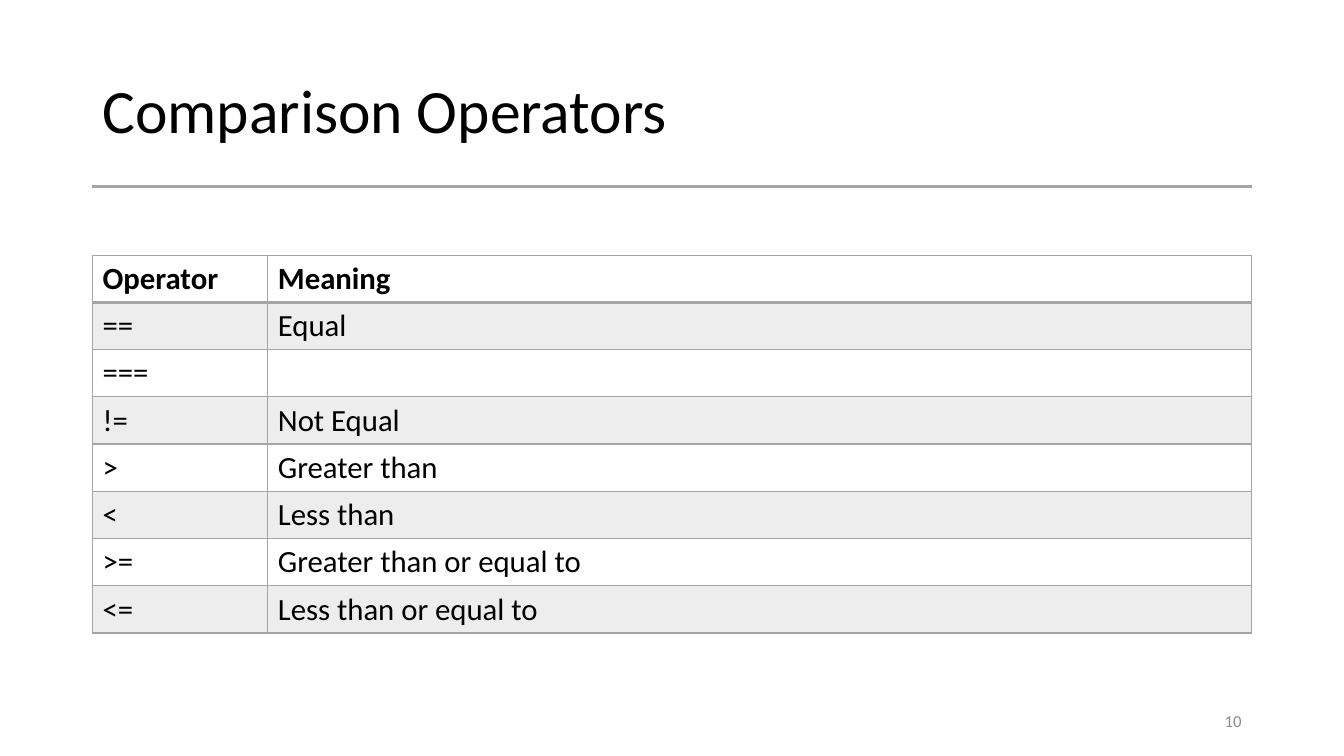
from dataclasses import dataclass

from lxml import etree
from pptx import Presentation
from pptx import util as u
from pptx.dml.color import RGBColor
from pptx.enum import shapes, text
from pptx.oxml import ns


@dataclass(frozen=True)
class Theme:
    font: str = "Calibri"
    ink: str = "000000"
    paper: str = "FFFFFF"
    rule: str = "A5A5A5"
    band: str = "EDEDED"
    muted: str = "8C8C8C"
    title: int = 44
    body: int = 22
    small: int = 12


THEME = Theme()
LEFT, WIDTH = u.Cm(2.33), u.Cm(29.21)
COLUMNS = (u.Cm(4.42), u.Cm(24.79))
ROW_HEIGHT = u.Cm(1.19)
OPERATORS = (
    ("Operator", "Meaning"),
    ("==", "Equal"),
    ("===", ""),
    ("!=", "Not Equal"),
    (">", "Greater than"),
    ("<", "Less than"),
    (">=", "Greater than or equal to"),
    ("<=", "Less than or equal to"),
)


def style_font(p, size, color, bold=False):
    p.font.name = THEME.font
    p.font.size = u.Pt(size)
    p.font.bold = bold
    p.font.color.rgb = RGBColor.from_string(color)


def add_label(s, box, words, size, color, align=text.PP_ALIGN.LEFT, spacing=1.0):
    tf = s.shapes.add_textbox(*box).text_frame
    tf.word_wrap = True
    tf.vertical_anchor = text.MSO_ANCHOR.MIDDLE
    p = tf.paragraphs[0]
    p.text = words
    p.alignment = align
    p.line_spacing = spacing
    style_font(p, size, color)


def add_rule(s, top):
    line = s.shapes.add_connector(
        shapes.MSO_CONNECTOR.STRAIGHT, LEFT, top, LEFT + WIDTH, top)
    line.line.color.rgb = RGBColor.from_string(THEME.rule)
    line.line.width = u.Pt(1.5)
    etree.SubElement(line._element.spPr, ns.qn("a:effectLst"))


def set_borders(cell, top, bottom):
    """Draw all four sides; the fill must be set afterwards."""
    props = cell._tc.get_or_add_tcPr()
    for side, width in (("L", 1), ("R", 1), ("T", top), ("B", bottom)):
        ln = etree.SubElement(props, ns.qn(f"a:ln{side}"), w=str(u.Pt(width)))
        fill = etree.SubElement(ln, ns.qn("a:solidFill"))
        etree.SubElement(fill, ns.qn("a:srgbClr"), val=THEME.rule)


def add_operator_table(s, top):
    table = s.shapes.add_table(
        len(OPERATORS), len(COLUMNS), LEFT, top, WIDTH,
        ROW_HEIGHT * len(OPERATORS)).table
    table.horz_banding = False
    for column, width in zip(table.columns, COLUMNS):
        column.width = width
    for i, row in enumerate(OPERATORS):
        for j, words in enumerate(row):
            cell = table.cell(i, j)
            set_borders(cell, top=2 if i == 1 else 1, bottom=2 if i == 0 else 1)
            cell.fill.solid()
            cell.fill.fore_color.rgb = RGBColor.from_string(
                THEME.band if i % 2 else THEME.paper)
            p = cell.text_frame.paragraphs[0]
            p.text = words
            style_font(p, THEME.body, THEME.ink, bold=i == 0)


def main():
    prs = Presentation()
    prs.slide_width, prs.slide_height = u.Cm(33.87), u.Cm(19.05)
    s = prs.slides.add_slide(prs.slide_layouts[6])
    add_rule(s, u.Cm(4.7))
    add_label(s, (LEFT, u.Cm(1.02), WIDTH, u.Cm(3.68)), "Comparison Operators",
              THEME.title, THEME.ink, spacing=0.9)
    add_operator_table(s, u.Cm(6.43))
    add_label(s, (u.Cm(23.92), u.Cm(17.66), u.Cm(7.62), u.Cm(1.01)), "10",
              THEME.small, THEME.muted, align=text.PP_ALIGN.RIGHT)
    prs.save("out.pptx")


if __name__ == "__main__":
    main()
